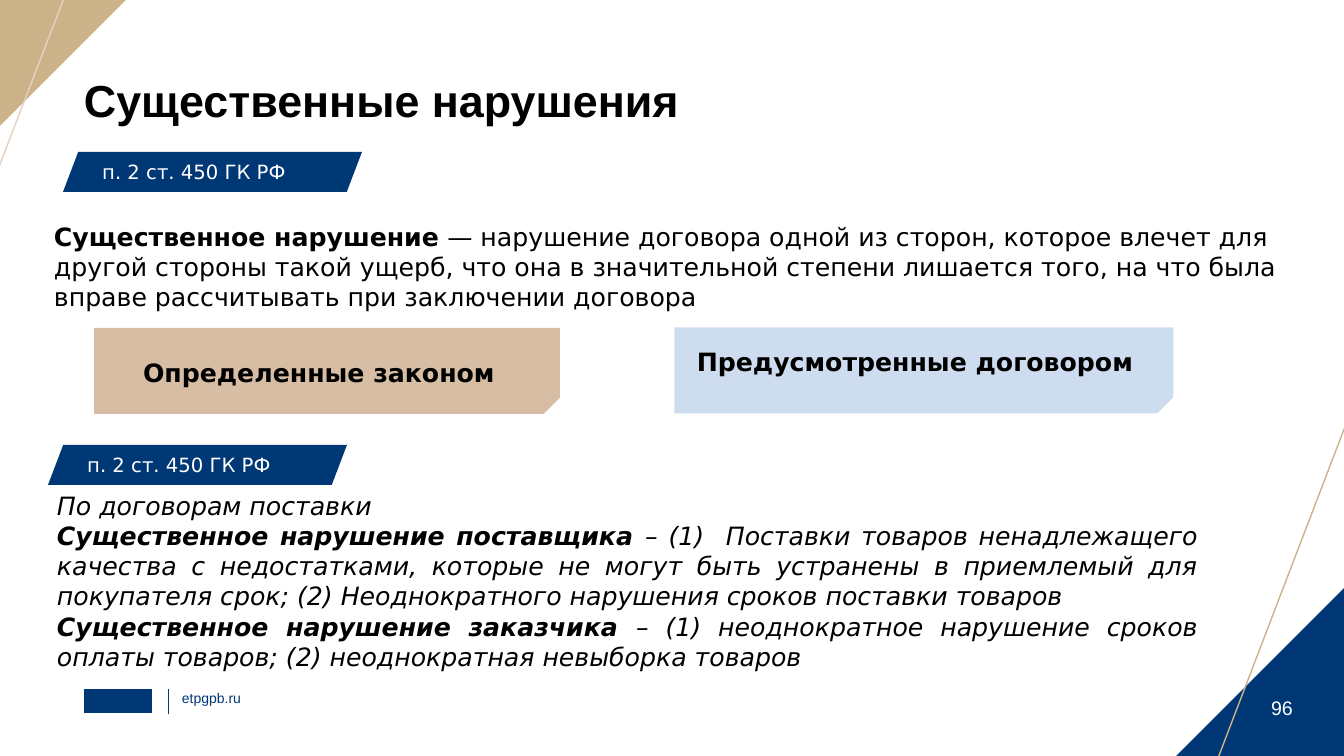
from dataclasses import dataclass

from lxml import etree
from pptx import Presentation
from pptx import util as u
from pptx.dml.color import RGBColor
from pptx.enum import shapes, text
from pptx.oxml.ns import qn

EMU_PER_PX = 914400 / 100.8
NAVY, GOLD, CREAM = "003876", "CCB289", "E3D2C0"
BLACK, WHITE = "000000", "FFFFFF"
SANS, ARIAL = "DejaVu Sans", "Arial"
LEFT, CENTER, JUSTIFY = text.PP_ALIGN.LEFT, text.PP_ALIGN.CENTER, text.PP_ALIGN.JUSTIFY
TOP, MIDDLE, BOTTOM = (
    text.MSO_ANCHOR.TOP, text.MSO_ANCHOR.MIDDLE, text.MSO_ANCHOR.BOTTOM)

Box = tuple[int, int, int, int]
Run = tuple[str, bool]


@dataclass
class Style:
    size: int = 18
    font: str = SANS
    color: str = BLACK
    italic: bool = False
    align: text.PP_ALIGN = LEFT
    anchor: text.MSO_ANCHOR = TOP
    margins: tuple[int, int] = (10, 5)
    indent: int = 0
    spacing: float = 1.0


@dataclass
class Figure:
    kind: shapes.MSO_SHAPE
    box: Box
    fill: str
    adjustment: float | None = None
    rotation: int = 0


@dataclass
class Line:
    start: tuple[int, int]
    end: tuple[int, int]
    color: str
    width: float = 1


@dataclass
class Label:
    box: Box
    paragraphs: list[list[Run]]
    style: Style


TRIANGLE = shapes.MSO_SHAPE.RIGHT_TRIANGLE
CORNER = shapes.MSO_SHAPE.ISOSCELES_TRIANGLE
SNIPPED = shapes.MSO_SHAPE.SNIP_1_RECTANGLE

FIGURES = [
    Figure(CORNER, (1175, 588, 169, 169), NAVY, 1),
    Figure(CORNER, (0, 0, 126, 126), GOLD, 1, 180),
    Figure(shapes.MSO_SHAPE.RECTANGLE, (84, 689, 68, 24), NAVY),
    Figure(SNIPPED, (284, 138, 86, 466), "D6BDA3", 0.19, 90),
    Figure(SNIPPED, (881, 121, 86, 499), "CEDCEF", 0.19, 90),
]

LINES = [
    Line((1348, 419), (1215, 766), GOLD),
    Line((66, -7), (-5, 177), CREAM),
    Line((168, 689), (168, 714), NAVY, 0.5),
]

LABELS = [
    Label((1241, 683, 82, 36), [[("96", False)]],
          Style(14, ARIAL, WHITE, align=CENTER, anchor=BOTTOM, margins=(0, 0))),
    Label((182, 690, 111, 17), [[("etpgpb.ru", False)]],
          Style(10, ARIAL, NAVY, margins=(0, 0))),
    Label((84, 79, 1175, 48), [[("Существенные нарушения", True)]],
          Style(32, ARIAL, margins=(0, 0), spacing=0.9)),
    Label((44, 216, 1258, 102), [[
        ("Существенное нарушение", True),
        (" — нарушение договора одной из сторон, которое влечет для другой стороны "
         "такой ущерб, что она в значительной степени лишается того, на что была "
         "вправе рассчитывать при заключении договора", False),
    ]], Style()),
    Label((44, 356, 515, 37), [[("Определенные законом", True)]],
          Style(align=JUSTIFY, indent=89, spacing=0.9)),
    Label((628, 341, 574, 40), [[("Предусмотренные договором", True)]],
          Style(align=CENTER)),
    Label((47, 485, 1161, 194), [
        [("По договорам поставки", False)],
        [("Существенное нарушение поставщика ", True),
         ("– (1)  Поставки товаров ненадлежащего качества с недостатками, которые "
          "не могут быть устранены в приемлемый для покупателя срок; "
          "(2) Неоднократного нарушения сроков поставки товаров", False)],
        [("Существенное нарушение заказчика ", True),
         ("– (1) неоднократное нарушение сроков оплаты товаров; "
          "(2) неоднократная невыборка товаров", False)],
    ], Style(italic=True, align=JUSTIFY)),
]

CHIP_STYLE = Style(14, color=WHITE, anchor=MIDDLE, margins=(8, 4))
CHIP_CORNERS = [(63, 152), (48, 445)]


def px(length: int) -> u.Emu:
    """Turn pixels into EMU."""
    return u.Emu(round(length * EMU_PER_PX))


def rgb(color: str) -> RGBColor:
    """Turn a hex string into a colour."""
    return RGBColor.from_string(color)


def write(frame, paragraphs: list[list[Run]], style: Style) -> None:
    """Fill a text frame with styled paragraphs."""
    frame.word_wrap = True
    frame.vertical_anchor = style.anchor
    frame.margin_left = frame.margin_right = px(style.margins[0])
    frame.margin_top = frame.margin_bottom = px(style.margins[1])
    for index, runs in enumerate(paragraphs):
        paragraph = frame.add_paragraph() if index else frame.paragraphs[0]
        paragraph.alignment = style.align
        paragraph.line_spacing = style.spacing
        if style.indent:
            paragraph._p.get_or_add_pPr().set("marL", str(px(style.indent)))
        font = paragraph.font
        font.size, font.name = u.Pt(style.size), style.font
        font.italic = style.italic
        font.color.rgb = rgb(style.color)
        mixed = len({bold for _, bold in runs}) > 1
        if not mixed:
            font.bold = runs[0][1]
        for words, bold in runs:
            run = paragraph.add_run()
            run.text = words
            if mixed:
                run.font.bold = bold


def draw_figure(slide, figure: Figure):
    """Draw a filled preset shape."""
    shape = slide.shapes.add_shape(figure.kind, *map(px, figure.box))
    shape.shadow.inherit = False
    shape.fill.solid()
    shape.fill.fore_color.rgb = rgb(figure.fill)
    shape.line.fill.background()
    shape.rotation = figure.rotation
    if figure.adjustment is not None:
        shape.adjustments[0] = figure.adjustment
    return shape


def draw_line(slide, line: Line) -> None:
    """Draw a thin straight line."""
    connector = slide.shapes.add_connector(
        shapes.MSO_CONNECTOR.STRAIGHT, *map(px, line.start + line.end))
    connector.line.color.rgb = rgb(line.color)
    connector.line.width = u.Pt(line.width)
    etree.SubElement(connector._element.spPr, qn("a:effectLst"))


def draw_label(slide, label: Label) -> None:
    """Draw a text box."""
    box = slide.shapes.add_textbox(*map(px, label.box))
    write(box.text_frame, label.paragraphs, label.style)


def draw_chip(slide, left: int, top: int) -> None:
    """Draw a slanted tag with the article reference."""
    chip = draw_figure(slide, Figure(
        shapes.MSO_SHAPE.PARALLELOGRAM, (left, top, 299, 40), NAVY, 0.38))
    write(chip.text_frame, [[("п. 2 ст. 450 ГК РФ", False)]], CHIP_STYLE)


def main() -> None:
    """Build and save the slide."""
    presentation = Presentation()
    presentation.slide_width, presentation.slide_height = px(1344), px(756)
    slide = presentation.slides.add_slide(presentation.slide_layouts[6])
    for figure in FIGURES:
        draw_figure(slide, figure)
    for line in LINES:
        draw_line(slide, line)
    for label in LABELS:
        draw_label(slide, label)
    for left, top in CHIP_CORNERS:
        draw_chip(slide, left, top)
    presentation.save("out.pptx")


if __name__ == "__main__":
    main()
